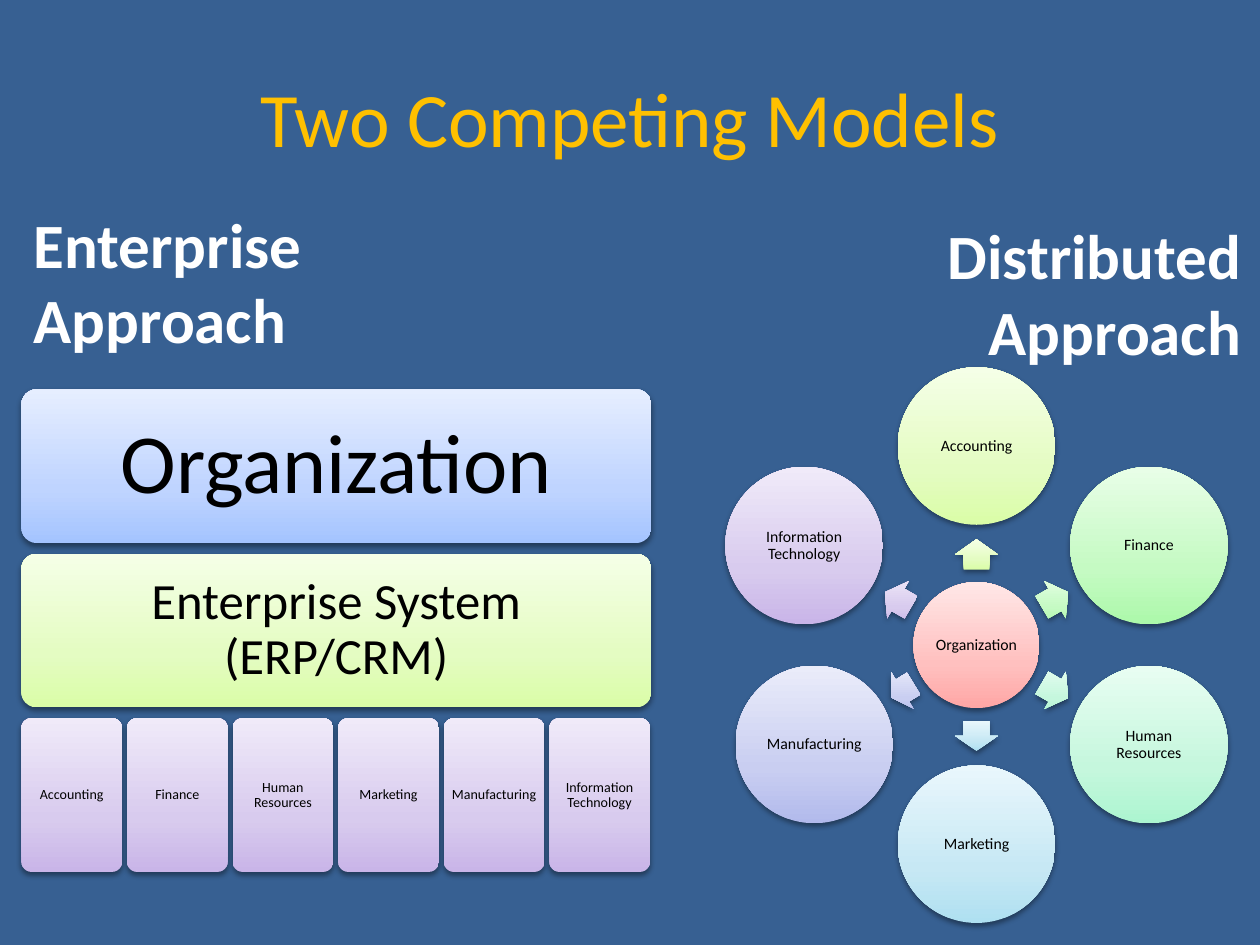
from math import cos, radians, sin

from lxml.etree import SubElement
from pptx import Presentation
from pptx.dml.color import RGBColor
from pptx.enum.shapes import MSO_SHAPE
from pptx.enum.text import MSO_ANCHOR, PP_ALIGN
from pptx.oxml.ns import qn
from pptx.util import Inches, Pt

BLUE = ("A4C4FF", "BFD4FF", "E6EEFF")
LIME = ("DAFDA7", "E4FCC2", "F5FFE7")
PURPLE = ("C9B5E8", "D8CBEE", "F0EAF9")
RED = ("FFA6A5", "FFC0BF", "FFE7E7")
GREEN = ("ACF9AA", "C5FAC3", "E8FEE7")
MINT = ("ACF5D0", "C5F7DD", "E8FDF2")
AQUA = ("AFE0F1", "C7E8F4", "E9F7FC")
INDIGO = ("B2BAEC", "C9CEF1", "EAECFA")

DEPARTMENTS = ["Accounting", "Finance", "Human Resources", "Marketing",
               "Manufacturing", "Information Technology"]
SPOKE_COLORS = [LIME, GREEN, MINT, AQUA, INDIGO, PURPLE]


def rgb(color):
    return RGBColor.from_string(color)


def add_xml(parent, tag, **attrs):
    return SubElement(parent, qn(tag), {k: str(v) for k, v in attrs.items()})


def set_text(sp, text, size, color="000000", bold=False, align=PP_ALIGN.CENTER,
             anchor=MSO_ANCHOR.MIDDLE, inset=None, spacing=None):
    tf = sp.text_frame
    tf.word_wrap = True
    tf.vertical_anchor = anchor
    if inset is not None:
        tf.margin_left = tf.margin_right = Inches(inset)
        tf.margin_top = tf.margin_bottom = Inches(inset)
    p = tf.paragraphs[0]
    p.alignment = align
    if spacing:
        p.line_spacing = spacing
    r = p.add_run()
    r.text = text
    r.font.name = "Calibri"
    r.font.size = Pt(size)
    r.font.bold = bold
    r.font.color.rgb = rgb(color)


def add_glossy(s, kind, x, y, w, h, colors, adjust=(), rotation=0):
    sp = s.shapes.add_shape(kind, Inches(x), Inches(y), Inches(w), Inches(h))
    sp.rotation = rotation
    for i, value in enumerate(adjust):
        sp.adjustments[i] = value
    pr = sp._element.spPr
    grad = add_xml(pr, "a:gradFill", rotWithShape=0)
    stops = add_xml(grad, "a:gsLst")
    for pos, color in zip((0, 35, 100), colors):
        add_xml(add_xml(stops, "a:gs", pos=pos * 1000), "a:srgbClr", val=color)
    add_xml(grad, "a:lin", ang=270 * 60000, scaled=0)
    sp.line.fill.background()
    sp.shadow.inherit = False
    shadow = add_xml(pr.find(qn("a:effectLst")), "a:outerShdw", blurRad=Pt(3.1),
                     dist=Pt(1.6), dir=90 * 60000, rotWithShape=0)
    add_xml(add_xml(shadow, "a:srgbClr", val="000000"), "a:alpha", val=38000)
    return sp


def add_block(s, text, x, y, w, colors, size, inset):
    sp = add_glossy(s, MSO_SHAPE.ROUNDED_RECTANGLE, x, y, w, 1.22, colors, (0.1,))
    set_text(sp, text, size, inset=inset, spacing=0.9)


def add_circle(s, text, cx, cy, d, colors):
    sp = add_glossy(s, MSO_SHAPE.OVAL, cx - d / 2, cy - d / 2, d, d, colors)
    set_text(sp, text, 9, inset=0.01, spacing=0.9)


def add_heading(s, text, x, y, w, align):
    sp = s.shapes.add_textbox(Inches(x), Inches(y), Inches(w), Inches(1.31))
    set_text(sp, text, 36, "FFFFFF", True, align, MSO_ANCHOR.TOP)


def add_enterprise(s):
    left, top, pitch = 0.17, 3.09, 1.305
    add_block(s, "Organization", left, top, 5, BLUE, 48, 0.2)
    add_block(s, "Enterprise System (ERP/CRM)", left, top + pitch, 5, LIME, 29, 0.12)
    for i, name in enumerate(DEPARTMENTS):
        add_block(s, name, left + i * 0.838, top + 2 * pitch, 0.8, PURPLE, 8, 0.03)


def add_distributed(s):
    cx, cy = 7.75, 5.12
    add_circle(s, "Organization", cx, cy, 1, RED)
    for i, (name, colors) in enumerate(zip(DEPARTMENTS, SPOKE_COLORS)):
        angle, reach, gap, length = 60 * i - 90, 1.58, 0.72, 0.24
        if name == "Manufacturing":
            angle, reach, gap, length = 148.5, 1.51, 0.69, 0.21
        dx, dy = cos(radians(angle)), sin(radians(angle))
        add_glossy(s, MSO_SHAPE.RIGHT_ARROW, cx + gap * dx - length / 2,
                   cy + gap * dy - 0.17, length, 0.34, colors, (0.6, 0.5), angle % 360)
        add_circle(s, name, cx + reach * dx, cy + reach * dy, 1.25, colors)


def main():
    prs = Presentation()
    prs.slide_width, prs.slide_height = Inches(10), Inches(7.5)
    s = prs.slides.add_slide(prs.slide_layouts[5])
    s.background.fill.solid()
    s.background.fill.fore_color.rgb = rgb("376092")
    title = s.shapes.title
    title.left, title.top = Inches(0.5), Inches(0.3)
    title.width, title.height = Inches(9), Inches(1.25)
    set_text(title, "Two Competing Models", 44, "FFC000")
    add_enterprise(s)
    add_distributed(s)
    add_heading(s, "Enterprise Approach", 0.17, 1.58, 4, PP_ALIGN.LEFT)
    add_heading(s, "Distributed Approach", 5.75, 1.67, 4.2, PP_ALIGN.RIGHT)
    prs.save("out.pptx")


if __name__ == "__main__":
    main()
